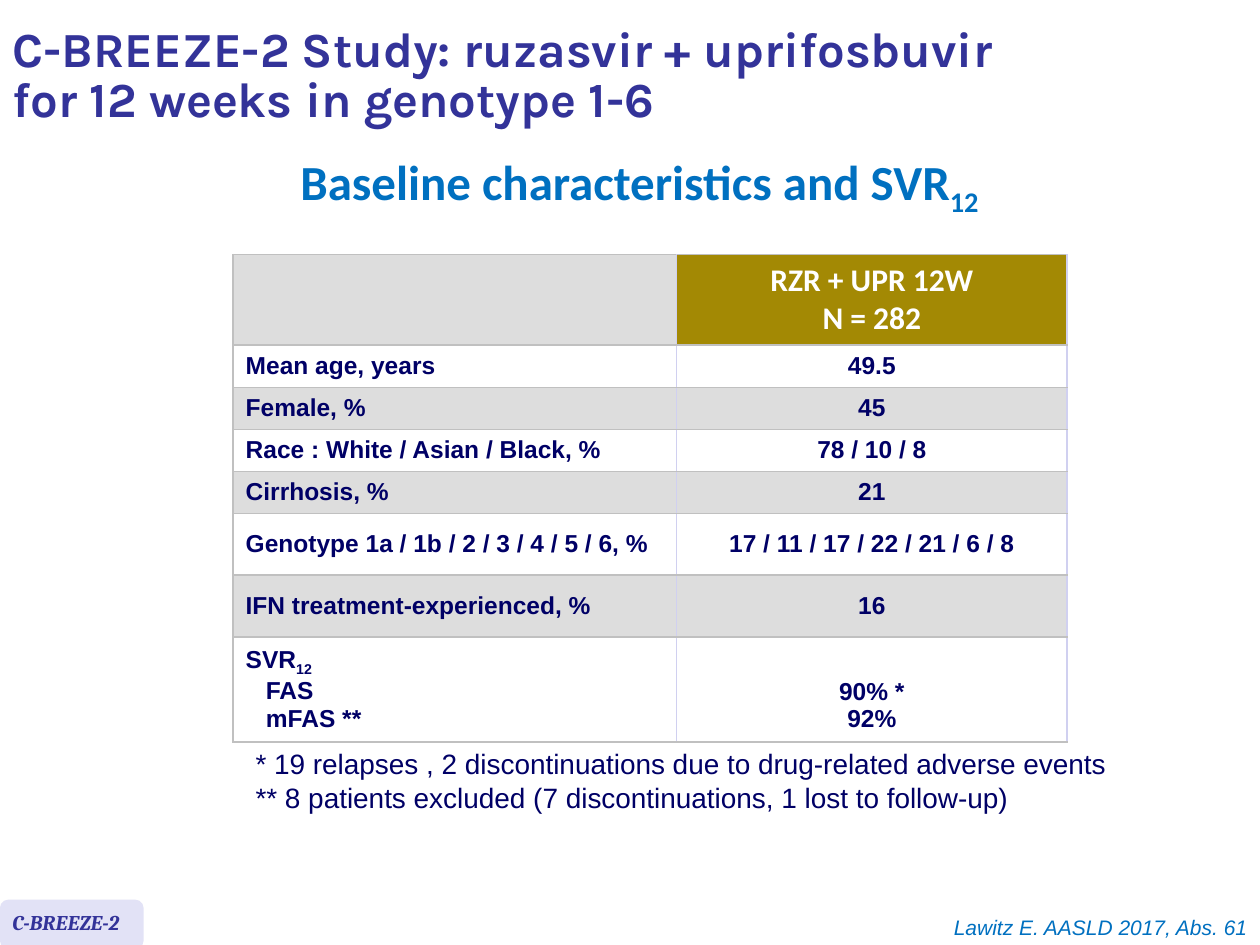
from pptx import Presentation
from pptx.dml.color import RGBColor
from pptx.enum.shapes import MSO_SHAPE as Shape
from pptx.enum.text import MSO_ANCHOR as Anchor, PP_ALIGN as Align
from pptx.oxml.ns import qn
from pptx.util import Inches, Pt
from lxml.etree import SubElement

NAVY, BLUE, INDIGO = "000066", "0070C0", "333399"
WHITE, GRAY, GOLD, LILAC = "FFFFFF", "DDDDDD", "A38904", "E2E2F6"
GRID, GRID_SIDE = "C0C0C0", "D0D0F0"

COLUMN_WIDTHS = [3.52, 3.1]
ROW_HEIGHTS = [0.72] + [0.32] * 4 + [0.49] * 2 + [0.79]
HEADER = ["RZR + UPR 12W", "N = 282"]
CHARACTERISTICS = [
    ("Mean age, years", "49.5"),
    ("Female, %", "45"),
    ("Race : White / Asian / Black, %", "78 / 10 / 8"),
    ("Cirrhosis, %", "21"),
    ("Genotype 1a / 1b / 2 / 3 / 4 / 5 / 6, %", "17 / 11 / 17 / 22 / 21 / 6 / 8"),
    ("IFN treatment-experienced, %", "16"),
]
RESPONSE_LABELS = [("SVR", "12"), "FAS", "mFAS **"]
RESPONSE_VALUES = ["90% *", "92%"]


def color(hex_code):
    return RGBColor.from_string(hex_code)


def write(frame, lines, size=14, font="Arial", fill=NAVY, bold=False, italic=False,
          align=Align.LEFT, spacing=None, anchor=None, indent=0):
    """One paragraph per line; a (text, subscript) pair lowers its second part.
    The indent applies to every line after the first."""
    if anchor is not None:
        frame.vertical_anchor = anchor
    for index, line in enumerate(lines):
        paragraph = frame.paragraphs[0] if index == 0 else frame.add_paragraph()
        paragraph.alignment = align
        if spacing is not None:
            paragraph.line_spacing = spacing
        if index and indent:
            paragraph._p.get_or_add_pPr().set("marL", str(Inches(indent)))
        parts = line if isinstance(line, tuple) else (line,)
        for position, part in enumerate(parts):
            run = paragraph.add_run()
            run.text = part
            run.font.size, run.font.name = Pt(size), font
            run.font.bold, run.font.italic = bold, italic
            run.font.color.rgb = color(fill)
            if position:
                run.font._element.set("baseline", "-25000")


def add_text(slide, box, lines, wrap=True, **text_format):
    frame = slide.shapes.add_textbox(*map(Inches, box)).text_frame
    frame.word_wrap = wrap
    write(frame, lines, **text_format)


def style_cell(cell, fill, left):
    # Borders must come before the fill in the cell properties
    properties = cell._tc.get_or_add_tcPr()
    borders = {"a:lnL": left, "a:lnR": GRID_SIDE, "a:lnT": GRID, "a:lnB": GRID}
    for tag, line_color in borders.items():
        line = SubElement(properties, qn(tag), w=str(Pt(1)))
        solid = SubElement(line, qn("a:solidFill"))
        SubElement(solid, qn("a:srgbClr"), val=line_color)
    cell.fill.solid()
    cell.fill.fore_color.rgb = color(fill)
    cell.vertical_anchor = Anchor.MIDDLE


def add_baseline_table(slide, box):
    table = slide.shapes.add_table(
        len(ROW_HEIGHTS), len(COLUMN_WIDTHS), *map(Inches, box)).table
    for column, width in zip(table.columns, COLUMN_WIDTHS):
        column.width = Inches(width)
    for index, (row, height) in enumerate(zip(table.rows, ROW_HEIGHTS)):
        row.height = Inches(height)
        label, value = row.cells
        band = WHITE if index % 2 else GRAY
        style_cell(label, band, GRID)
        style_cell(value, band if index else GOLD, GRID_SIDE)

    # Header
    write(table.cell(0, 1).text_frame, HEADER, size=18, font="Calibri",
          fill=WHITE, bold=True, align=Align.CENTER)

    # Patient characteristics
    for index, (label, value) in enumerate(CHARACTERISTICS, start=1):
        write(table.cell(index, 0).text_frame, [label], bold=True)
        write(table.cell(index, 1).text_frame, [value], bold=True, align=Align.CENTER)

    # Response: values sit beside the two indented labels
    last = len(ROW_HEIGHTS) - 1
    write(table.cell(last, 0).text_frame, RESPONSE_LABELS, bold=True, indent=0.16)
    response = table.cell(last, 1)
    response.vertical_anchor = Anchor.BOTTOM
    response.margin_bottom = Inches(0.07)
    write(response.text_frame, RESPONSE_VALUES, bold=True, align=Align.CENTER)


def add_study_tag(slide, box):
    left, top, width, height = box
    tag = slide.shapes.add_shape(Shape.ROUNDED_RECTANGLE, *map(Inches, box))
    tag.shadow.inherit = False
    tag.fill.solid()
    tag.fill.fore_color.rgb = color(LILAC)
    tag.line.fill.background()
    add_text(slide, (left, top + 0.03, width, 0.3), ["C-BREEZE-2"], size=12,
             font="Cambria", fill=INDIGO, bold=True, italic=True)


def main():
    deck = Presentation()
    deck.slide_width, deck.slide_height = Inches(10), Inches(7.5)
    slide = deck.slides.add_slide(deck.slide_layouts[6])

    # Title and subtitle
    add_text(slide, (0, 0.08, 8.31, 1.07),
             ["C-BREEZE-2 Study: ruzasvir + uprifosbuvir for 12 weeks in genotype 1-6"],
             size=28, font="Karla", fill=INDIGO, bold=True, spacing=0.85,
             anchor=Anchor.MIDDLE)
    add_text(slide, (0.35, 1.47, 9.45, 0.36),
             [("Baseline characteristics and SVR", "12")], size=28, font="Calibri",
             fill=BLUE, bold=True, align=Align.CENTER, spacing=Pt(15.2))

    # Table and its footnotes
    add_baseline_table(slide, (1.85, 2.02, sum(COLUMN_WIDTHS), sum(ROW_HEIGHTS)))
    add_text(slide, (1.93, 5.88, 7.04, 0.64),
             ["* 19 relapses , 2 discontinuations due to drug-related adverse events",
              "** 8 patients excluded (7 discontinuations, 1 lost to follow-up)"],
             wrap=False, size=16)

    # Footer
    add_study_tag(slide, (0, 7.14, 1.14, 0.39))
    add_text(slide, (2.64, 7.21, 7.36, 0.3), ["Lawitz E. AASLD 2017, Abs. 61"],
             size=12, fill=BLUE, italic=True, align=Align.RIGHT)

    deck.save("out.pptx")


if __name__ == "__main__":
    main()
